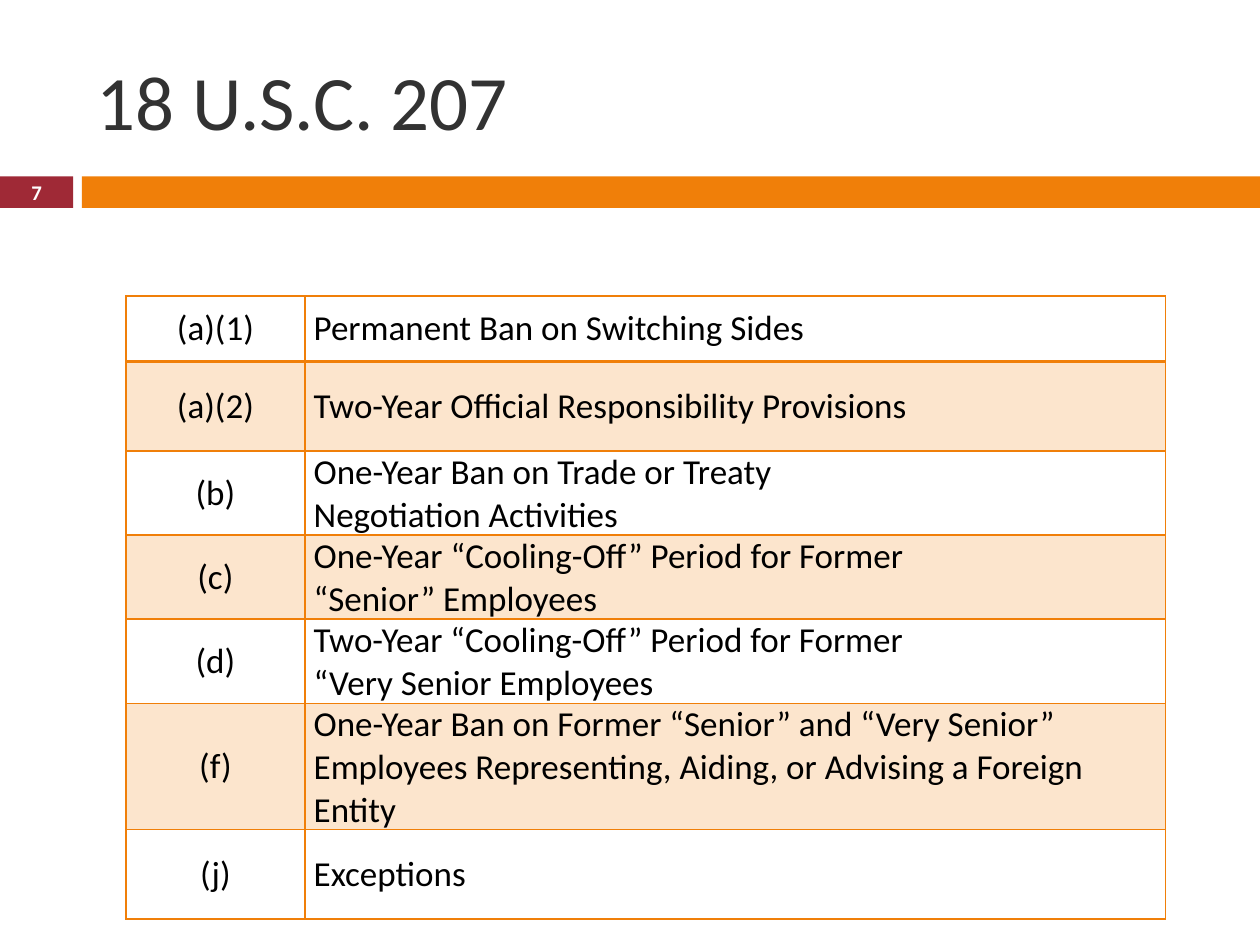
from lxml.etree import SubElement
from pptx import Presentation
from pptx.dml.color import RGBColor
from pptx.enum.shapes import MSO_SHAPE
from pptx.enum.text import MSO_ANCHOR, PP_ALIGN
from pptx.oxml.ns import qn
from pptx.util import Inches, Pt

COLORS = {"orange": "F07F09", "red": "9F2936", "title": "323232",
          "text": "000000", "white": "FFFFFF"}
FONT = "Calibri"
WIDTH, HEIGHT = 10, 7.5
ROWS = [
    (0.52, "(a)(1)", ["Permanent Ban on Switching Sides"]),
    (0.71, "(a)(2)", ["Two-Year Official Responsibility Provisions"]),
    (0.52, "(b)", ["One-Year Ban on Trade or Treaty", "Negotiation Activities"]),
    (0.52, "(c)", ["One-Year “Cooling-Off” Period for Former", "“Senior” Employees"]),
    (0.52, "(d)", ["Two-Year “Cooling-Off” Period for Former", "“Very Senior Employees"]),
    (0.71, "(f)", ["One-Year Ban on Former “Senior” and “Very Senior” Employees "
                   "Representing, Aiding, or Advising a Foreign Entity"]),
    (0.71, "(j)", ["Exceptions"]),
]


def color(name):
    """Return the named palette colour."""
    return RGBColor.from_string(COLORS[name])


def write(frame, lines, size, ink, align=PP_ALIGN.LEFT, bold=False):
    """Write each line as a paragraph of one run."""
    for index, line in enumerate(lines):
        para = frame.paragraphs[0] if index == 0 else frame.add_paragraph()
        para.alignment = align
        span = para.add_run()
        span.text = line
        span.font.name, span.font.size, span.font.bold = FONT, Pt(size), bold
        span.font.color.rgb = color(ink)


def add_text(page, box, line, size, ink, **style):
    """Add a vertically centred line of text in the box."""
    frame = page.shapes.add_textbox(*map(Inches, box)).text_frame
    frame.word_wrap = True
    frame.vertical_anchor = MSO_ANCHOR.MIDDLE
    write(frame, [line], size, ink, **style)


def add_bar(page, box, fill):
    """Add a plain filled rectangle."""
    bar = page.shapes.add_shape(MSO_SHAPE.RECTANGLE, *map(Inches, box))
    bar.shadow.inherit = False
    bar.fill.solid()
    bar.fill.fore_color.rgb = color(fill)
    bar.line.fill.background()


def add_band(page, box, number):
    """Add the page number block and the bar that runs beside it."""
    left, top, width, height = box
    block, gap = 0.58, 0.07
    add_bar(page, (left, top, block, height), "red")
    add_bar(page, (left + block + gap, top, width - block - gap, height), "orange")
    add_text(page, (left, top, block, height), number, 11.9, "white",
             align=PP_ALIGN.CENTER, bold=True)


def set_borders(cell, top, bottom):
    """Draw orange borders, with the given top and bottom weights in points."""
    properties = cell._tc.get_or_add_tcPr()
    for side, weight in (("L", 1), ("R", 1), ("T", top), ("B", bottom)):
        line = SubElement(properties, qn(f"a:ln{side}"), w=str(Pt(weight)))
        fill = SubElement(line, qn("a:solidFill"))
        SubElement(fill, qn("a:srgbClr"), val=COLORS["orange"])


def fill_cell(cell, shaded):
    """Give the cell a translucent orange fill or none."""
    if not shaded:
        cell.fill.background()
        return
    cell.fill.solid()
    cell.fill.fore_color.rgb = color("orange")
    tint = cell._tc.tcPr.find(f"{qn('a:solidFill')}/{qn('a:srgbClr')}")
    SubElement(tint, qn("a:alpha"), val="20000")


def add_provisions(page, box):
    """Add the table of provisions, shading every second row."""
    table = page.shapes.add_table(len(ROWS), 2, *map(Inches, box)).table
    table.first_row = table.horz_banding = False
    code_width = 1.42
    table.columns[0].width = Inches(code_width)
    table.columns[1].width = Inches(box[2] - code_width)
    for index, (height, code, lines) in enumerate(ROWS):
        table.rows[index].height = Inches(height)
        entries = (([code], PP_ALIGN.CENTER), (lines, PP_ALIGN.LEFT))
        for column, (content, align) in enumerate(entries):
            cell = table.cell(index, column)
            cell.margin_left = cell.margin_right = Inches(0.07)
            cell.margin_top = cell.margin_bottom = 0
            cell.vertical_anchor = MSO_ANCHOR.MIDDLE
            set_borders(cell, 2 if index == 1 else 1, 2 if index == 0 else 1)
            fill_cell(cell, index % 2 == 1)
            write(cell.text_frame, content, 20, "text", align)


def main():
    """Build and save the slide."""
    deck = Presentation()
    deck.slide_width, deck.slide_height = Inches(WIDTH), Inches(HEIGHT)
    page = deck.slides.add_slide(deck.slide_layouts[6])
    add_band(page, (0, 1.4, WIDTH, 0.25), "7")
    add_text(page, (0.67, 0.25, 8.92, 1.08), "18 U.S.C. 207", 44, "title")
    add_provisions(page, (1, 2.35, 8.25, sum(row[0] for row in ROWS)))
    deck.save("out.pptx")


if __name__ == "__main__":
    main()
